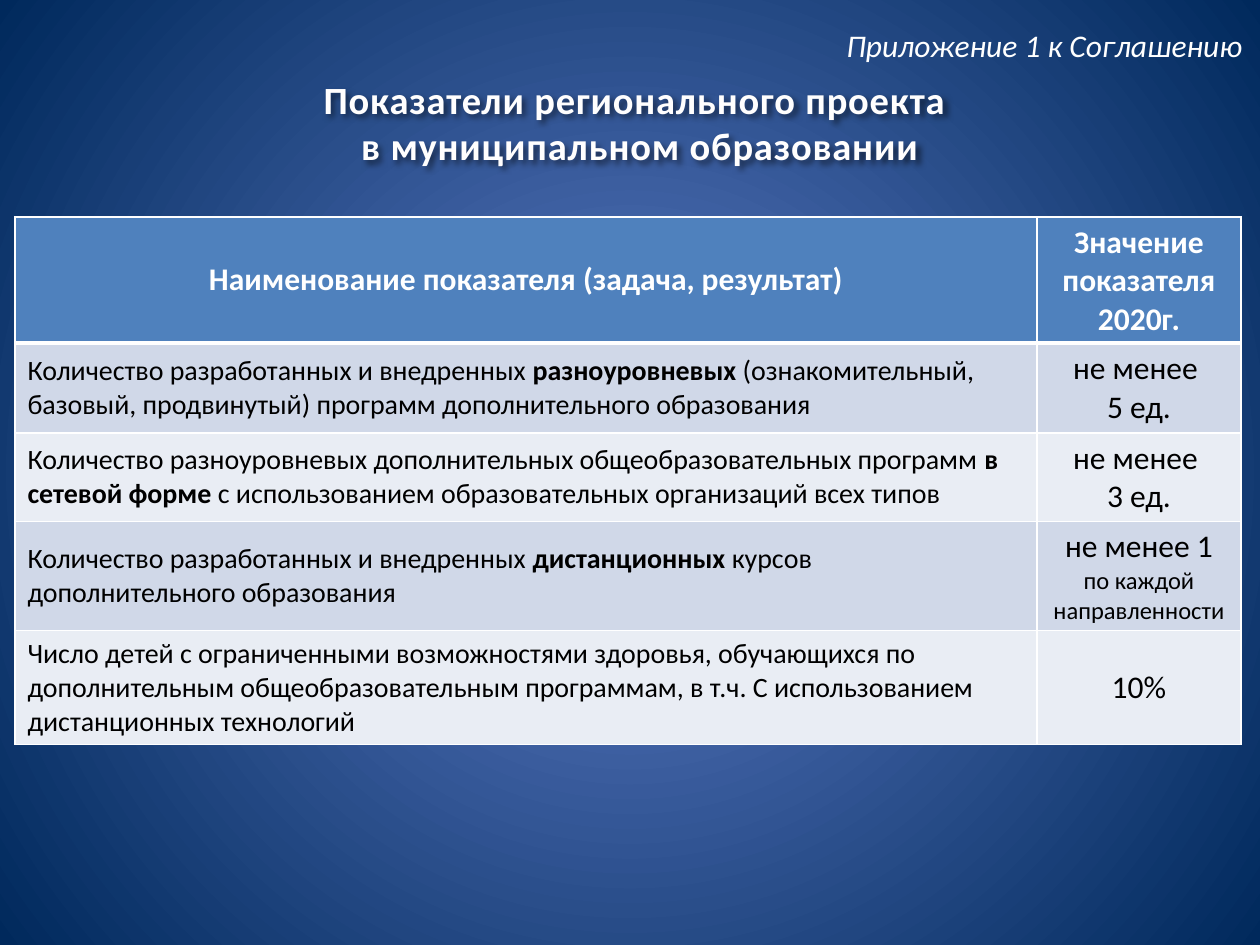
import pptx
import pptx.util
import pptx.dml.color
import pptx.enum.text
import pptx.oxml
import pptx.oxml.ns
import lxml.etree

EMU_PER_PX = 914400 / 126
ALIGN = pptx.enum.text.PP_ALIGN
MIDDLE = pptx.enum.text.MSO_ANCHOR.MIDDLE
NS = pptx.oxml.ns.nsdecls("a")


def px(n):
    return pptx.util.Emu(round(n * EMU_PER_PX))


def rgb(value):
    return pptx.dml.color.RGBColor.from_string(value)


class SlideBuilder:
    font = "Calibri"
    white = "FFFFFF"
    black = "000000"
    header = "4F81BD"
    bands = ("D0D8E8", "E9EDF4")

    def __init__(self, prs):
        self.s = prs.slides.add_slide(prs.slide_layouts[5])

    def background(self, center, edge):
        fill = self.s.background.fill
        fill.gradient()
        for stop, color, position in zip(fill.gradient_stops, (center, edge), (0, 1)):
            stop.color.rgb = rgb(color)
            stop.position = position
        lin = self.s.background._cSld.find(".//" + pptx.oxml.ns.qn("a:lin"))
        lin.getparent().replace(lin, pptx.oxml.parse_xml(
            f'<a:path {NS} path="circle">'
            '<a:fillToRect l="50000" t="50000" r="50000" b="50000"/></a:path>'))

    def run(self, p, text, size, color, bold=False, italic=False):
        r = p.add_run()
        r.text = text
        r.font.name = self.font
        r.font.size = pptx.util.Pt(size)
        r.font.bold = bold
        r.font.italic = italic
        r.font.color.rgb = rgb(color)
        return r

    def place(self, sp, x, y, w, h):
        sp.left, sp.top, sp.width, sp.height = px(x), px(y), px(w), px(h)

    def title(self, lines, x, y, w, h):
        sp = self.s.shapes.title
        self.place(sp, x, y, w, h)
        tf = sp.text_frame
        tf.word_wrap = True
        tf.auto_size = pptx.enum.text.MSO_AUTO_SIZE.NONE
        tf.vertical_anchor = MIDDLE
        p = tf.paragraphs[0]
        p.alignment = ALIGN.CENTER
        for i, line in enumerate(lines):
            if i:
                p.add_line_break()
            r = self.run(p, line, 22, "FFFEFE", bold=True)
            r.font._element.set("spc", "50")
        sp._element.spPr.append(pptx.oxml.parse_xml(
            f'<a:effectLst {NS}><a:outerShdw blurRad="38100" dist="25400" dir="2700000">'
            '<a:srgbClr val="000000"><a:alpha val="50000"/></a:srgbClr>'
            '</a:outerShdw></a:effectLst>'))

    def note(self, text, x, y, w, h):
        tf = self.s.shapes.add_textbox(px(x), px(y), px(w), px(h)).text_frame
        tf.word_wrap = False
        self.run(tf.paragraphs[0], text, 18, self.white, italic=True)

    def border(self, cell, bottom):
        props = cell._tc.get_or_add_tcPr()
        widths = {"lnL": 1, "lnR": 1, "lnT": 1, "lnB": bottom}
        for i, (side, width) in enumerate(widths.items()):
            props.insert(i, pptx.oxml.parse_xml(
                f'<a:{side} {NS} w="{pptx.util.Pt(width)}"><a:solidFill>'
                f'<a:srgbClr val="{self.white}"/></a:solidFill></a:{side}>'))

    def cell(self, cell, paragraphs, fill, color, align, bottom=1):
        cell.fill.solid()
        cell.fill.fore_color.rgb = rgb(fill)
        cell.vertical_anchor = MIDDLE
        self.border(cell, bottom)
        tf = cell.text_frame
        for i, runs in enumerate(paragraphs):
            p = tf.add_paragraph() if i else tf.paragraphs[0]
            p.alignment = align
            for text, size, bold in runs:
                self.run(p, text, size, color, bold)

    def table(self, head, rows, x, y, widths, heights):
        table = self.s.shapes.add_table(
            len(heights), len(widths), px(x), px(y),
            px(sum(widths)), px(sum(heights))).table
        for column, width in zip(table.columns, widths):
            column.width = px(width)
        for row, height in zip(table.rows, heights):
            row.height = px(height)
        for j, lines in enumerate(head):
            self.cell(table.cell(0, j), [[(line, 18, True)] for line in lines],
                      self.header, self.white, ALIGN.CENTER, bottom=3)
        for i, (name, value) in enumerate(rows):
            fill = self.bands[i % 2]
            runs = [(text, 16, k % 2 == 1) for k, text in enumerate(name)]
            self.cell(table.cell(i + 1, 0), [runs], fill, self.black, ALIGN.LEFT)
            lines = [[(text, size, False)] for text, size in value]
            self.cell(table.cell(i + 1, 1), lines, fill, self.black, ALIGN.CENTER)


HEAD = [["Наименование показателя (задача, результат)"],
        ["Значение показателя", "2020г."]]
ROWS = [
    (["Количество разработанных и внедренных ", "разноуровневых",
      " (ознакомительный, базовый, продвинутый) программ дополнительного образования"],
     [("не менее ", 18), ("5 ед.", 18)]),
    (["Количество разноуровневых дополнительных общеобразовательных программ ",
      "в сетевой форме ", "с использованием образовательных организаций всех типов"],
     [("не менее ", 18), ("3 ед.", 18)]),
    (["Количество разработанных и внедренных ", "дистанционных ",
      "курсов дополнительного образования"],
     [("не менее 1", 18), ("по каждой направленности", 14)]),
    (["Число детей с ограниченными возможностями здоровья, обучающихся по "
      "дополнительным общеобразовательным программам, в т.ч. С использованием "
      "дистанционных технологий"],
     [("10%", 18)]),
]


def main():
    prs = pptx.Presentation()
    prs.slide_width, prs.slide_height = px(1260), px(945)
    slide = SlideBuilder(prs)
    slide.background("5E7CC5", "00295C")
    slide.title(["Показатели регионального проекта ", "в муниципальном образовании"],
                20, 88, 1240, 69)
    slide.note("Приложение 1 к Соглашению", 834, 20, 426, 50)
    slide.table(HEAD, ROWS, 15, 217, [1022, 204], [125, 90, 88, 109, 114])
    prs.save("out.pptx")


if __name__ == "__main__":
    main()
